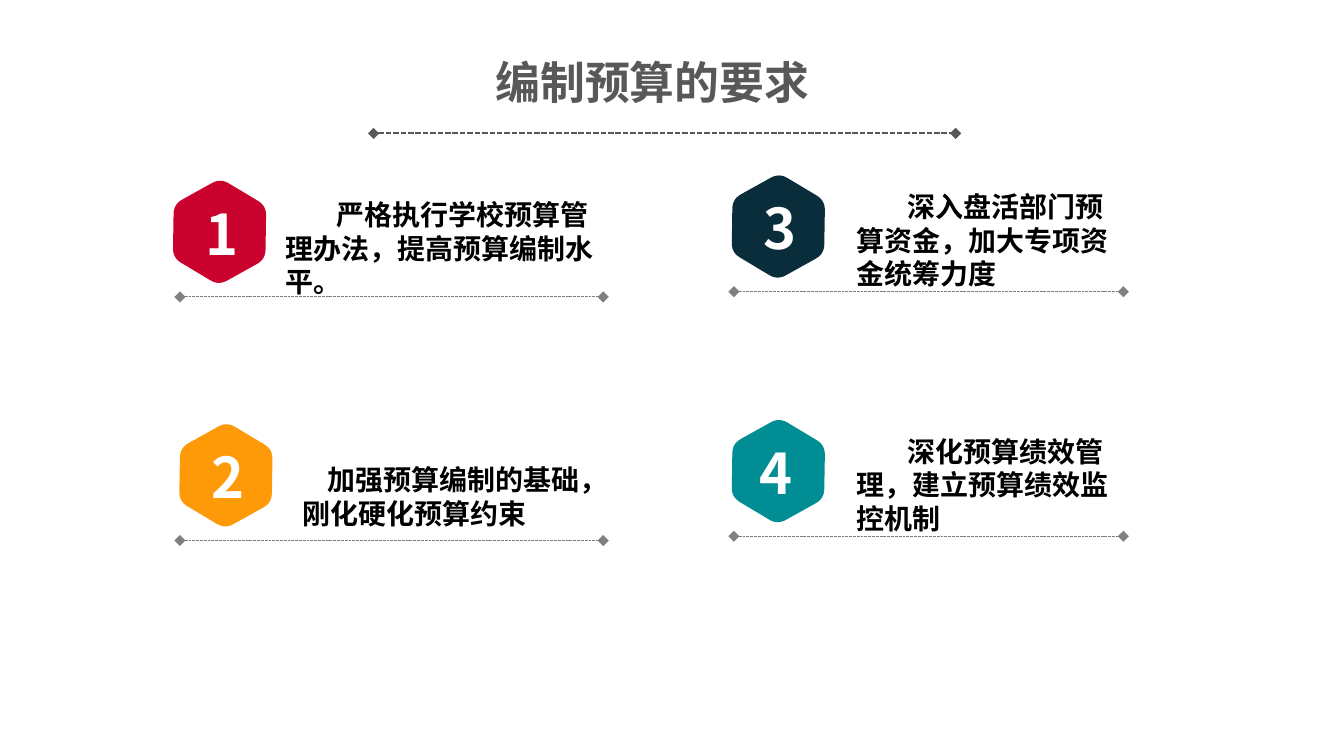
from dataclasses import dataclass
from math import cos, radians, sin

from lxml import etree
from pptx import Presentation
from pptx.dml.color import RGBColor
from pptx.enum.dml import MSO_LINE
from pptx.enum.shapes import MSO_CONNECTOR
from pptx.enum.text import MSO_ANCHOR, PP_ALIGN
from pptx.oxml.ns import qn
from pptx.util import Cm, Pt

STRAIGHT = MSO_CONNECTOR.STRAIGHT
DASH = MSO_LINE.SQUARE_DOT
TOP, MIDDLE = MSO_ANCHOR.TOP, MSO_ANCHOR.MIDDLE
LEFT, CENTER = PP_ALIGN.LEFT, PP_ALIGN.CENTER


@dataclass(frozen=True)
class Theme:
    font: str = "Noto Sans CJK SC"
    title: str = "585858"
    rule: str = "808080"
    body: str = "000000"
    number: str = "FFFFFF"
    title_size: int = 24
    body_size: int = 15
    number_size: int = 30


@dataclass(frozen=True)
class Requirement:
    number: str
    text: str
    color: str
    box: tuple
    badge_x: float
    number_x: float
    text_box: tuple
    indent: float = 0.97


THEME = Theme()
BADGE_Y = 1.27
BADGE_RADIUS = 1.01
BADGE_TILT = 0.9
CORNER_CUT = 0.18
CORNER_STEPS = 6
REQUIREMENTS = (
    Requirement("1", "严格执行学校预算管理办法，提高预算编制水平。", "CA032E",
                (3.4, 3.11, 8, 2.5), 0.75, 0.31, (1.81, 0.52, 6.38, 2.11)),
    Requirement("2", "加强预算编制的基础，刚化硬化预算约束", "FE9A08",
                (3.4, 7.71, 8, 2.5), 0.87, 0.41, (2.14, 0.93, 6.05, 1.47), 0.47),
    Requirement("3", "深入盘活部门预算资金，加大专项资金统筹力度", "092D3B",
                (13.87, 3.01, 7.36, 2.5), 0.84, 0.38, (2.13, 0.47, 5.31, 2.11)),
    Requirement("4", "深化预算绩效管理，建立预算绩效监控机制", "008D94",
                (13.87, 7.63, 7.36, 2.5), 0.84, 0.3, (2.13, 0.47, 5.26, 2.11)),
)


def add_text(slide, text, box, size, color, anchor=TOP, align=LEFT, wrap=True, indent=0):
    shape = slide.shapes.add_textbox(*(Cm(length) for length in box))
    frame = shape.text_frame
    frame.margin_left = frame.margin_right = Cm(0.18)
    frame.margin_top = frame.margin_bottom = Cm(0.1)
    frame.word_wrap = wrap
    frame.vertical_anchor = anchor
    frame.text = text
    paragraph = frame.paragraphs[0]
    paragraph.alignment = align
    if indent:
        properties = paragraph._p.get_or_add_pPr()
        properties.set("marL", "0")
        properties.set("indent", str(Cm(indent)))
    run = paragraph.runs[0]
    run.font.size = Pt(size)
    run.font.bold = True
    run.font.name = THEME.font
    run.font.color.rgb = RGBColor.from_string(color)
    east_asian = etree.SubElement(run._r.get_or_add_rPr(), qn("a:ea"))
    east_asian.set("typeface", THEME.font)


def add_rule(slide, left, top, width, color, weight):
    rule = slide.shapes.add_connector(STRAIGHT, Cm(left), Cm(top), Cm(left + width), Cm(top))
    rule.line.color.rgb = RGBColor.from_string(color)
    rule.line.width = Pt(weight)
    rule.line.dash_style = DASH
    line = rule.line._get_or_add_ln()
    for end in ("a:headEnd", "a:tailEnd"):
        etree.SubElement(line, qn(end)).set("type", "diamond")
    etree.SubElement(rule._element.spPr, qn("a:effectLst"))


def rounded_hexagon(center_x, center_y):
    angles = [radians(60 * index - 90 + BADGE_TILT) for index in range(6)]
    corners = [(center_x + BADGE_RADIUS * cos(angle), center_y + BADGE_RADIUS * sin(angle))
               for angle in angles]
    share = CORNER_CUT / BADGE_RADIUS
    points = []
    for index, corner in enumerate(corners):
        before, after = corners[index - 1], corners[(index + 1) % 6]
        for step in range(CORNER_STEPS + 1):
            t = step / CORNER_STEPS
            points.append(tuple(
                Cm(c + share * ((1 - t) ** 2 * (b - c) + t ** 2 * (a - c)))
                for b, c, a in zip(before, corner, after)))
    return points


def add_badge(slide, center_x, center_y, color):
    points = rounded_hexagon(center_x, center_y)
    builder = slide.shapes.build_freeform(*points[0])
    builder.add_line_segments(points[1:], close=True)
    badge = builder.convert_to_shape()
    badge.shadow.inherit = False
    badge.fill.solid()
    badge.fill.fore_color.rgb = RGBColor.from_string(color)
    badge.line.fill.background()


def add_header(slide, box):
    left, top, width, height = box
    add_rule(slide, left, top + height, width, THEME.title, 1)
    add_text(slide, "编制预算的要求", (left + 2.08, top, 6.38, 1.22),
             THEME.title_size, THEME.title, align=CENTER, wrap=False)


def add_requirement(slide, requirement):
    left, top, width, height = requirement.box
    text_x, text_y, text_width, text_height = requirement.text_box
    center_y = top + BADGE_Y
    add_badge(slide, left + requirement.badge_x, center_y, requirement.color)
    add_rule(slide, left, top + height, width, THEME.rule, 0.5)
    add_text(slide, requirement.text, (left + text_x, top + text_y, text_width, text_height),
             THEME.body_size, THEME.body, anchor=MIDDLE, indent=requirement.indent)
    add_text(slide, requirement.number,
             (left + requirement.number_x, center_y - 0.72, 0.79, 1.47),
             THEME.number_size, THEME.number)


def main():
    presentation = Presentation()
    presentation.slide_width = Cm(25.4)
    presentation.slide_height = Cm(14.28)
    slide = presentation.slides.add_slide(presentation.slide_layouts[6])
    add_header(slide, (7.06, 0.94, 11, 1.58))
    for requirement in REQUIREMENTS:
        add_requirement(slide, requirement)
    presentation.save("out.pptx")


if __name__ == "__main__":
    main()
